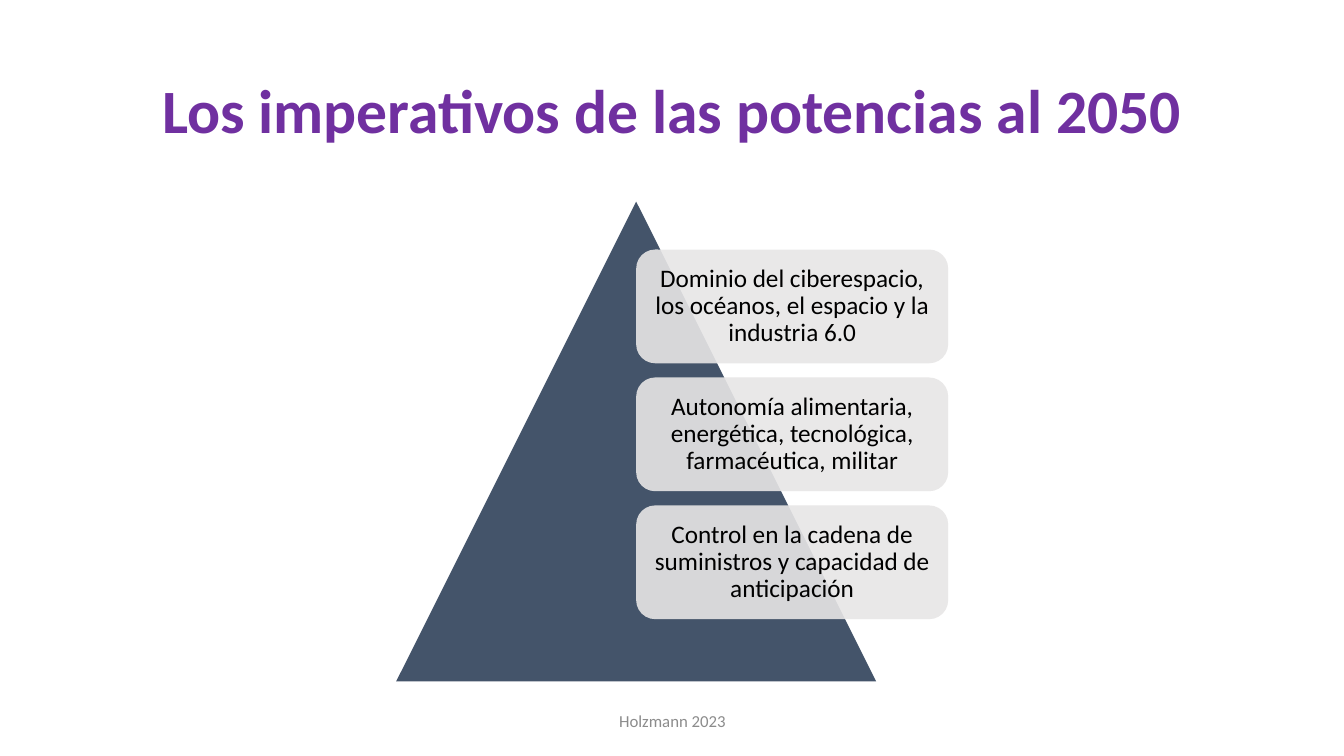
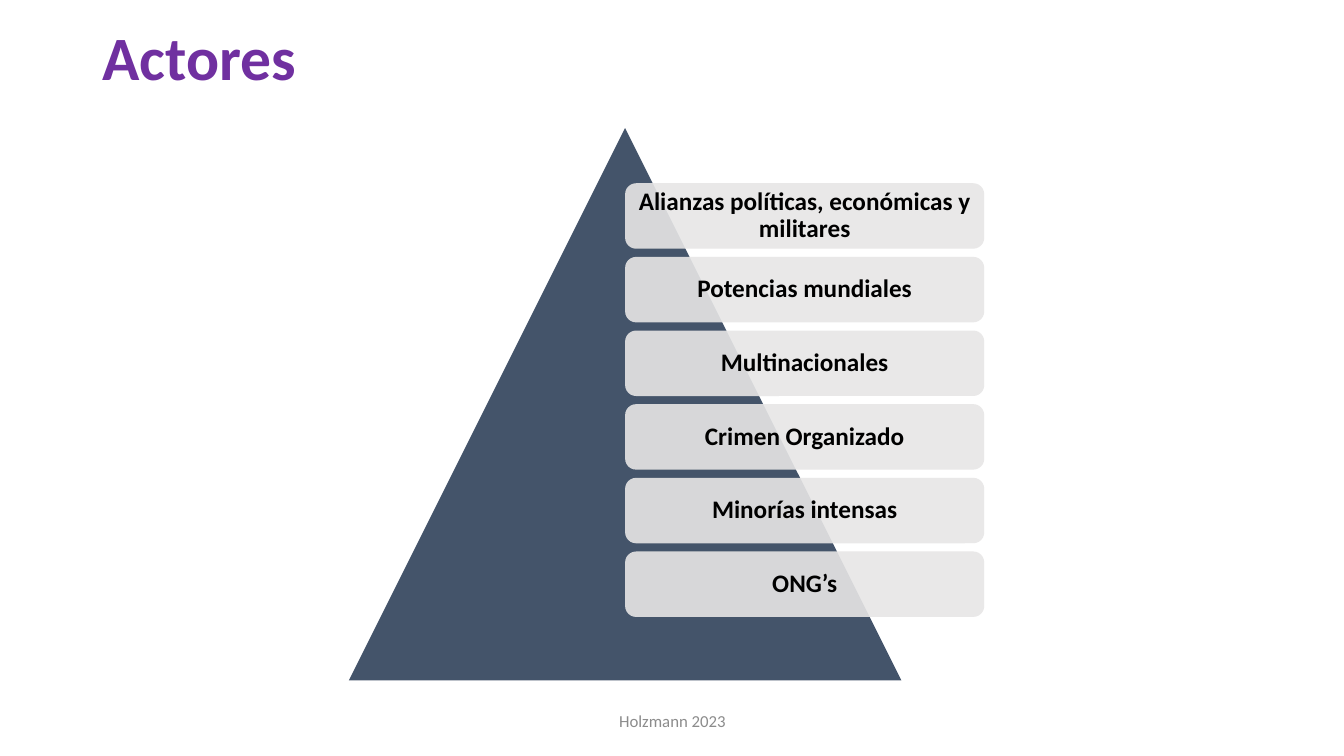
from lxml import etree
from pptx import Presentation
from pptx.dml.color import RGBColor
from pptx.enum.shapes import MSO_SHAPE as Shape
from pptx.enum.text import MSO_ANCHOR as Anchor, PP_ALIGN as Align
from pptx.oxml.ns import qn
from pptx.util import Inches, Pt

PURPLE = RGBColor(0x70, 0x30, 0xA0)
SLATE = RGBColor(0x44, 0x54, 0x6A)
PALE_GRAY = RGBColor(0xE7, 0xE6, 0xE6)
FOOTER_GRAY = RGBColor(0x8C, 0x8C, 0x8C)
BLACK = RGBColor(0, 0, 0)
FONT = "Calibri"
FOOTER = "Holzmann 2023"

# Content: title area is (top, height), pyramid is (left, top, side)
SLIDES = [
    {
        "title": "Los imperativos de las potencias al 2050",
        "title_area": (0.4, 1.45),
        "title_align": Align.CENTER,
        "pyramid": (3.93, 2, 4.76),
        "bold": False,
        "levels": [
            "Dominio del ciberespacio, los océanos, el espacio y la industria 6.0",
            "Autonomía alimentaria, energética, tecnológica, farmacéutica, militar",
            "Control en la cadena de suministros y capacidad de anticipación",
        ],
    },
    {
        "title": "Actores",
        "title_area": (0.13, 0.94),
        "title_align": Align.LEFT,
        "pyramid": (3.46, 1.27, 5.48),
        "bold": True,
        "levels": [
            "Alianzas políticas, económicas y militares",
            "Potencias mundiales",
            "Multinacionales",
            "Crimen Organizado",
            "Minorías intensas",
            "ONG’s",
        ],
    },
]


def write(box, text, size, color, align=Align.CENTER, bold=False, spacing=0.9):
    frame = box.text_frame
    frame.word_wrap = True
    frame.vertical_anchor = Anchor.MIDDLE
    para = frame.paragraphs[0]
    para.text = text
    para.alignment = align
    para.line_spacing = spacing
    font = para.font
    font.name, font.size, font.bold = FONT, Pt(size), bold
    font.color.rgb = color


def add_text(page, area, *text, **style):
    write(page.shapes.add_textbox(*map(Inches, area)), *text, **style)


def add_filled(page, kind, area, color):
    shape = page.shapes.add_shape(kind, *map(Inches, area))
    shape.shadow.inherit = False
    shape.fill.solid()
    shape.fill.fore_color.rgb = color
    shape.line.fill.background()
    return shape


def set_opacity(shape, percent):
    color = shape.fill._xPr.find(qn("a:solidFill"))[0]
    etree.SubElement(color, qn("a:alpha"), val=str(percent * 1000))


def add_pyramid(page, left, top, side, levels, bold):
    add_filled(page, Shape.ISOSCELES_TRIANGLE, (left, top, side, side), SLATE)
    # Boxes start on the triangle's axis; each gap is an eighth of a box
    pitch = 0.8 * side / len(levels)
    height = pitch / 1.125
    for index, text in enumerate(levels):
        area = (left + side / 2, top + 0.1 * side + index * pitch, 0.65 * side, height)
        box = add_filled(page, Shape.ROUNDED_RECTANGLE, area, PALE_GRAY)
        set_opacity(box, 90)
        frame = box.text_frame
        frame.margin_left = frame.margin_right = Inches(0.07)
        frame.margin_top = frame.margin_bottom = Inches(0.07)
        write(box, text, 18, BLACK, bold=bold)


def main():
    deck = Presentation()
    deck.slide_width, deck.slide_height = Inches(13.33), Inches(7.5)
    for content in SLIDES:
        page = deck.slides.add_slide(deck.slide_layouts[6])
        top, height = content["title_area"]
        add_text(page, (0.92, top, 11.5, height), content["title"], 44, PURPLE,
                 align=content["title_align"], bold=True)
        add_pyramid(page, *content["pyramid"], content["levels"], content["bold"])
        add_text(page, (4.42, 6.95, 4.5, 0.4), FOOTER, 12, FOOTER_GRAY, spacing=1.0)
    deck.save("out.pptx")


if __name__ == "__main__":
    main()
